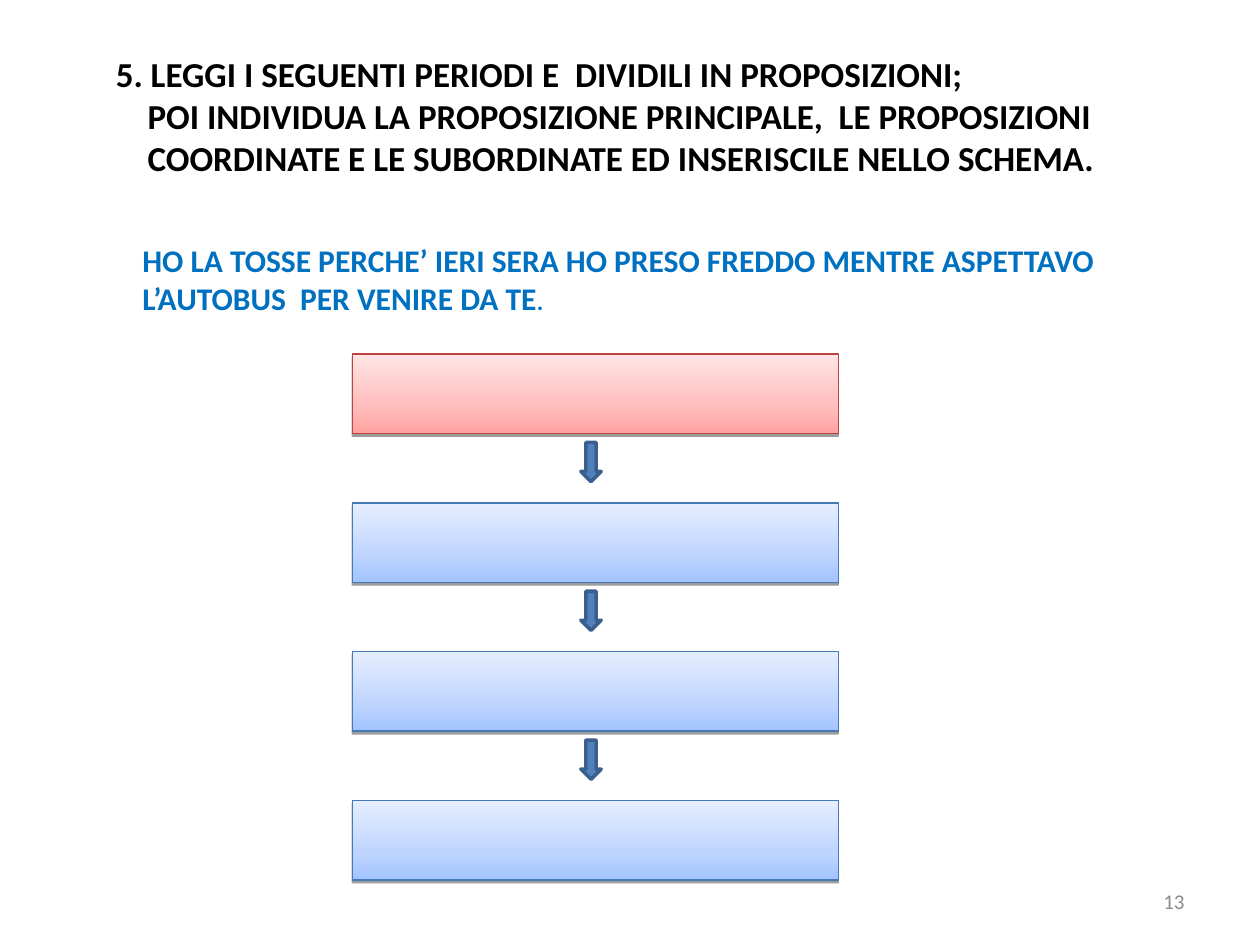
import pptx
import pptx.util
import pptx.dml.color
import pptx.enum.shapes
import pptx.enum.text
import pptx.oxml.ns
import lxml.etree
from dataclasses import dataclass

Cm, Pt = pptx.util.Cm, pptx.util.Pt
SHAPE = pptx.enum.shapes.MSO_SHAPE
ALIGN = pptx.enum.text.PP_ALIGN
qn = pptx.oxml.ns.qn


@dataclass(frozen=True)
class Theme:
    font: str = "Calibri"
    title: str = "000000"
    phrase: str = "0070C0"
    number: str = "8C8C8C"
    arrow: str = "4F81BD"
    edge: str = "3A5F8C"
    main: tuple = ("BC4542", "FFA2A1", "FFBEBD", "FFE5E5")
    clause: tuple = ("4579B8", "A3C4FF", "BFD5FF", "E5EEFF")
    title_size: int = 20
    phrase_size: int = 18
    dot_size: int = 14
    number_size: int = 12


def rgb(code):
    return pptx.dml.color.RGBColor.from_string(code)


class Deck:
    def __init__(self, theme):
        self.theme = theme
        self.file = pptx.Presentation()
        self.file.slide_width, self.file.slide_height = Cm(25.4), Cm(19.05)
        self.slide = self.file.slides.add_slide(self.file.slide_layouts[5])

    def label(self, shape, text, size, color, bold=True, align=ALIGN.LEFT, wrap=False):
        frame = shape.text_frame
        frame.text = text
        frame.word_wrap = wrap
        frame.auto_size = pptx.enum.text.MSO_AUTO_SIZE.NONE
        frame.vertical_anchor = pptx.enum.text.MSO_ANCHOR.MIDDLE
        for para in frame.paragraphs:
            para.alignment = align
            for run in para.runs:
                self.style(run, size, color, bold)
        return frame

    def style(self, run, size, color, bold):
        run.font.name, run.font.size, run.font.bold = self.theme.font, Pt(size), bold
        run.font.color.rgb = rgb(color)

    def title(self, text, left, top, width, height, indent):
        """Fill the title; lines after the first are indented."""
        shape = self.slide.shapes.title
        shape.left, shape.top, shape.width, shape.height = map(Cm, (left, top, width, height))
        frame = self.label(shape, text, self.theme.title_size, self.theme.title)
        for para in frame.paragraphs[1:]:
            para._p.get_or_add_pPr().set("marL", str(Cm(indent)))

    def text(self, text, left, top, width, height, *look, **more):
        box = self.slide.shapes.add_textbox(*map(Cm, (left, top, width, height)))
        return self.label(box, text, *look, **more)

    def shape(self, kind, left, top, width, height, edge, weight):
        item = self.slide.shapes.add_shape(kind, *map(Cm, (left, top, width, height)))
        item.shadow.inherit = False
        item.line.color.rgb = rgb(edge)
        item.line.width = Pt(weight)
        return item

    def box(self, left, top, width, height, colors):
        """Draw a box shaded from bottom to top, with a thin shadow below."""
        edge, *shades = colors
        item = self.shape(SHAPE.RECTANGLE, left, top, width, height, edge, 0.75)
        item.fill.gradient()
        item.fill.gradient_angle = 90
        props = item._element.spPr
        stops = props.find(".//" + qn("a:gsLst"))
        stops.clear()
        for place, shade in zip((0, 35, 100), shades):
            stop = lxml.etree.SubElement(stops, qn("a:gs"), pos=str(place * 1000))
            lxml.etree.SubElement(stop, qn("a:srgbClr"), val=shade)
        shadow = lxml.etree.SubElement(
            props.find(qn("a:effectLst")), qn("a:outerShdw"),
            blurRad="0", dist=str(Pt(1.6)), dir="5400000", rotWithShape="0")
        tint = lxml.etree.SubElement(shadow, qn("a:srgbClr"), val="000000")
        lxml.etree.SubElement(tint, qn("a:alpha"), val="38000")

    def arrow(self, left, top, width, height):
        item = self.shape(SHAPE.DOWN_ARROW, left, top, width, height, self.theme.edge, 2)
        item.fill.solid()
        item.fill.fore_color.rgb = rgb(self.theme.arrow)


def main():
    theme = Theme()
    deck = Deck(theme)
    deck.title(
        "5. LEGGI I SEGUENTI PERIODI E  DIVIDILI IN PROPOSIZIONI;\n"
        "POI INDIVIDUA LA PROPOSIZIONE PRINCIPALE,  LE PROPOSIZIONI\n"
        "COORDINATE E LE SUBORDINATE ED INSERISCILE NELLO SCHEMA.",
        2.08, 0.91, 20.83, 2.82, indent=0.64)

    phrase = deck.text(
        "HO LA TOSSE PERCHE’ IERI SERA HO PRESO FREDDO MENTRE ASPETTAVO\n"
        "L’AUTOBUS  PER VENIRE DA TE",
        2.62, 4.72, 20.47, 1.8, theme.phrase_size, theme.phrase)
    dot = phrase.paragraphs[-1].add_run()
    dot.text = "."
    deck.style(dot, theme.dot_size, theme.phrase, True)

    step = 3
    levels = [theme.main] + [theme.clause] * 3
    for row, colors in enumerate(levels):
        deck.box(7.1, 7.14 + row * step, 9.8, 1.6, colors)
    for row in range(len(levels) - 1):
        deck.arrow(11.71, 8.92 + row * step, 0.41, 0.79)

    deck.text("13", 18.2, 17.66, 5.93, 1.01, theme.number_size, theme.number,
              bold=False, align=ALIGN.RIGHT, wrap=True)
    deck.file.save("out.pptx")


if __name__ == "__main__":
    main()
